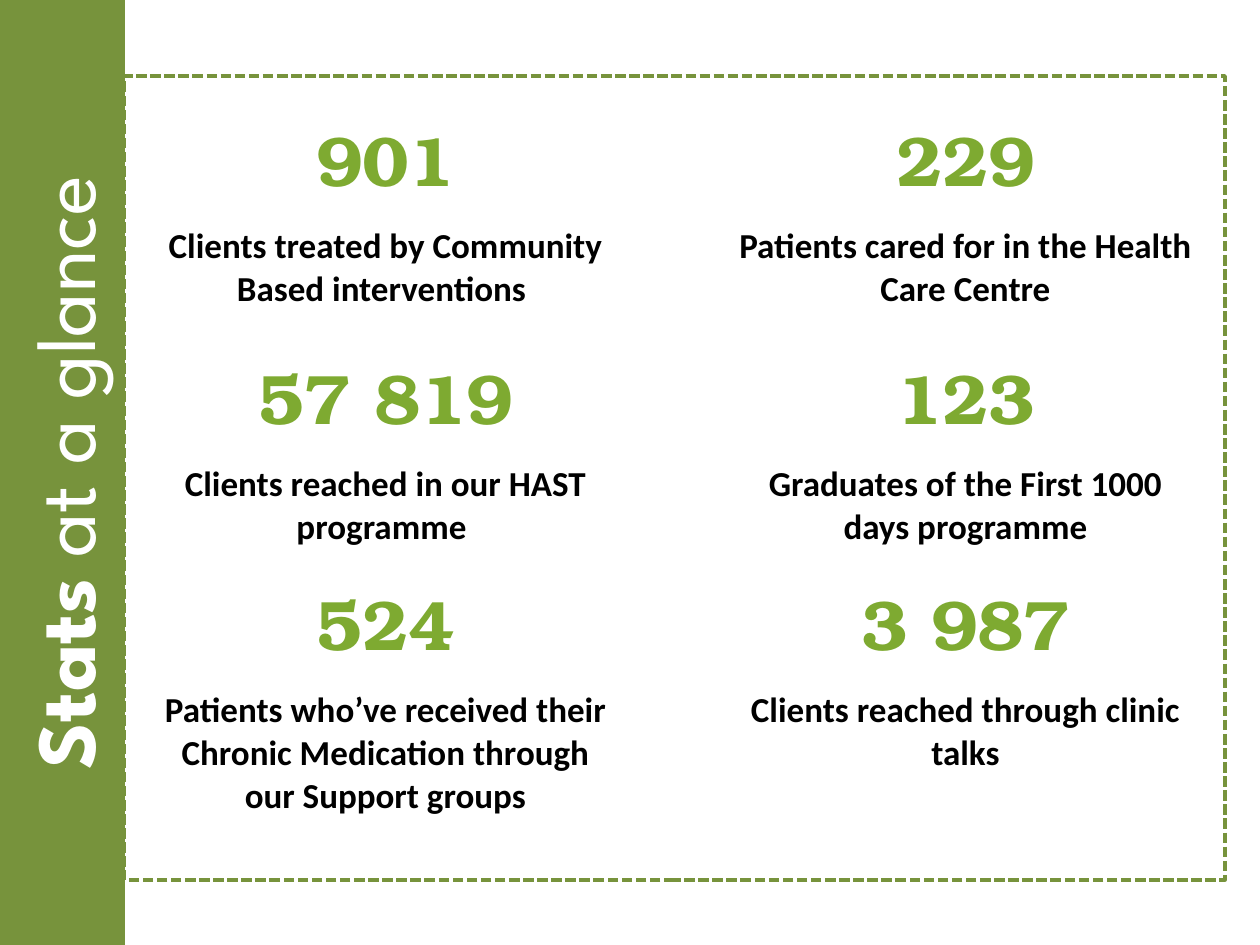
from pptx import Presentation
from pptx.dml.color import RGBColor
from pptx.enum.dml import MSO_LINE
from pptx.enum.shapes import MSO_SHAPE
from pptx.enum.text import MSO_ANCHOR, PP_ALIGN
from pptx.util import Emu, Pt

RECTANGLE = MSO_SHAPE.RECTANGLE
DASHED = MSO_LINE.SQUARE_DOT
CENTER = PP_ALIGN.CENTER
TOP, MIDDLE = MSO_ANCHOR.TOP, MSO_ANCHOR.MIDDLE

PX_PER_INCH = 126
BLANK = 6
COLORS = {"band": "77933C", "figure": "7EAA31", "label": "000000", "white": "FFFFFF"}

# Each row holds a left and a right statistic: figure, label, space after label
STATS = [
    [("901", "Clients treated by Community Based interventions ", 0),
     ("229", "Patients cared for in the Health Care Centre", 0)],
    [("57 819", "Clients reached in our HAST programme ", 10),
     ("123", "Graduates of the First 1000 days programme", 0)],
    [("524", "Patients who’ve received their Chronic Medication through our Support groups", 0),
     ("3 987", "Clients reached through clinic talks", 10)],
]
STAT_COLUMNS = (0, 2)


def px(length):
    return Emu(round(length * 914400 / PX_PER_INCH))


def color(name):
    return RGBColor.from_string(COLORS[name])


def add_text(para, text, *, font, size, fill, bold=True, after=0):
    para.alignment = CENTER
    para.space_after = Pt(after)
    span = para.add_run()
    span.text = text
    span.font.name = font
    span.font.size = Pt(size)
    span.font.bold = bold
    span.font.color.rgb = color(fill)


class StatsPage:
    figure_style = dict(font="TeX Gyre Bonum", size=40, fill="figure", after=10)
    label_style = dict(font="Calibri", size=20, fill="label")
    title_style = dict(font="League Spartan", size=48, fill="white", after=10)

    def __init__(self, deck):
        self.page = deck.slides.add_slide(deck.slide_layouts[BLANK])

    def stat(self, cell, figure, label, after):
        frame = cell.text_frame
        add_text(frame.paragraphs[0], figure, **self.figure_style)
        add_text(frame.add_paragraph(), label, after=after, **self.label_style)

    def table(self, left, top, widths, heights, stats):
        frame = self.page.shapes.add_table(
            len(heights), len(widths), px(left), px(top), px(sum(widths)), px(sum(heights)))
        table = frame.table
        table.first_row = table.horz_banding = False
        for column, width in zip(table.columns, widths):
            column.width = px(width)
        for row, height in zip(table.rows, heights):
            row.height = px(height)
        for cell in table.iter_cells():
            cell.fill.background()
            cell.vertical_anchor = TOP
            cell.margin_left = cell.margin_right = px(9)
            cell.margin_top = cell.margin_bottom = 0
        for row, pair in enumerate(stats):
            for column, stat in zip(STAT_COLUMNS, pair):
                self.stat(table.cell(row, column), *stat)

    def rectangle(self, left, top, width, height, line_width):
        box = self.page.shapes.add_shape(RECTANGLE, px(left), px(top), px(width), px(height))
        box.shadow.inherit = False
        box.line.color.rgb = color("band")
        box.line.width = Pt(line_width)
        return box

    def dashed_frame(self, left, top, width, height):
        box = self.rectangle(left, top, width, height, 2)
        box.fill.background()
        box.line.dash_style = DASHED

    def side_title(self, left, top, width, height, strong, rest):
        band = self.rectangle(left, top, width, height, 0.75)
        band.fill.solid()
        band.fill.fore_color.rgb = color("band")
        frame = band.text_frame
        frame.vertical_anchor = MIDDLE
        frame.word_wrap = True
        # Turn the text to read upwards
        frame._txBody.bodyPr.set("vert", "vert270")
        add_text(frame.paragraphs[0], strong, **self.title_style)
        add_text(frame.paragraphs[0], rest, bold=False, **self.title_style)


def main():
    deck = Presentation()
    deck.slide_width, deck.slide_height = px(1260), px(945)
    stats_page = StatsPage(deck)

    # Statistics in two columns with a gutter between them
    stats_page.table(144, 106, (483, 97, 483), (238, 226, 217), STATS)

    # Border, then the vertical title band in front of it
    stats_page.dashed_frame(124, 76, 1101, 804)
    stats_page.side_title(0, 0, 124, 945, "Stats", " at a glance")

    deck.save("out.pptx")


if __name__ == "__main__":
    main()
